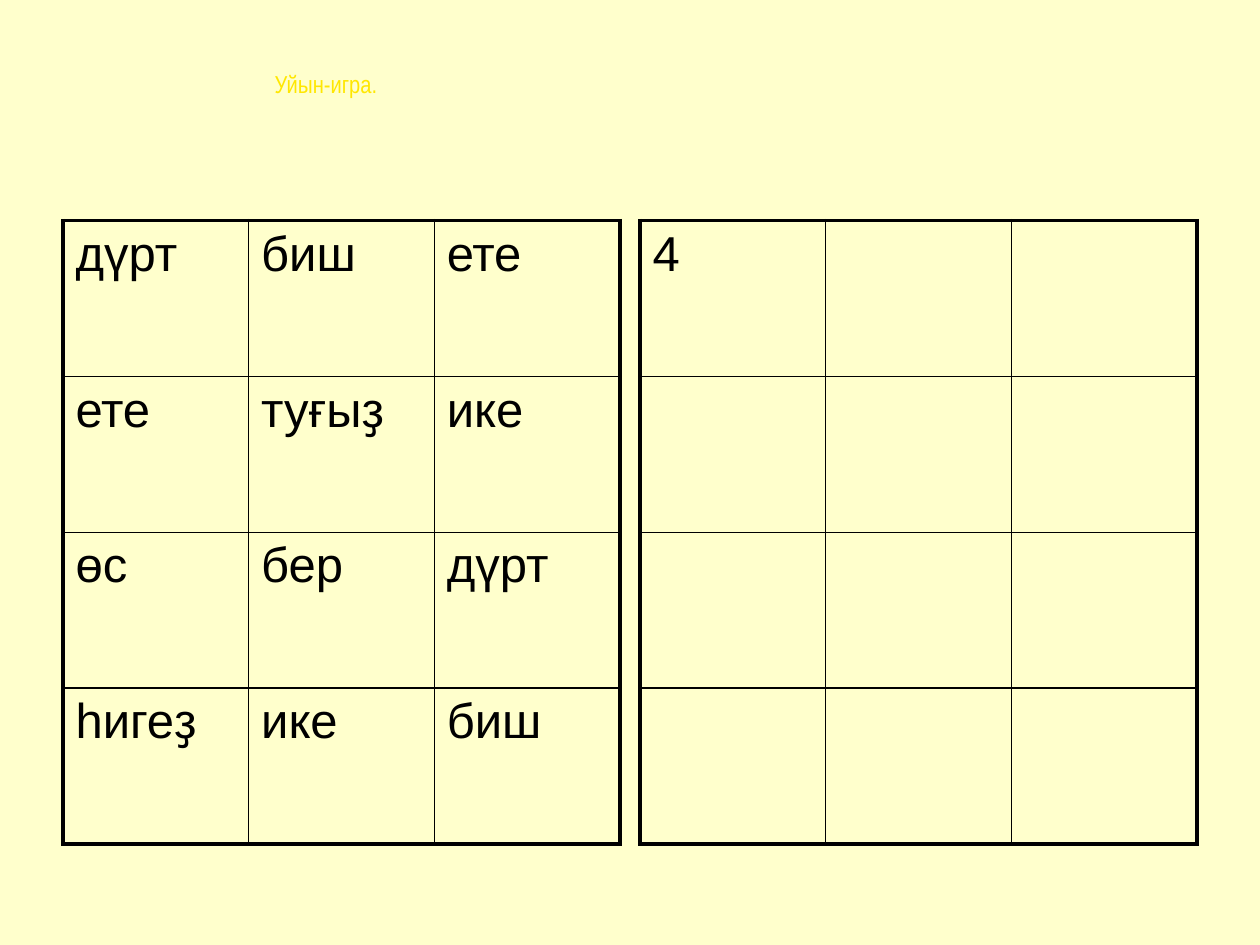
from lxml.etree import SubElement
from pptx import Presentation
from pptx.dml.color import RGBColor
from pptx.enum.text import MSO_ANCHOR, MSO_AUTO_SIZE, PP_ALIGN
from pptx.oxml.ns import qn
from pptx.util import Inches, Pt

COLORS = {"background": "FFFFCC", "title": "FFE701", "ink": "000000"}
ROWS, COLUMNS = 4, 3
THICK, THIN = 2.25, 1
TABLE_TOP, TABLE_WIDTH, TABLE_HEIGHT = 1.75, 4.42, 4.95

WORDS = [
    ["дүрт", "биш", "ете"],
    ["ете", "туғыҙ", "ике"],
    ["өс", "бер", "дүрт"],
    ["һигеҙ", "ике", "биш"],
]
ANSWERS = [["4", "", ""]] + [[""] * COLUMNS for _ in range(ROWS - 1)]


def color(name):
    return RGBColor.from_string(COLORS[name])


def format_text(para, font, size, color_name):
    for span in para.runs:
        span.font.name = font
        span.font.size = Pt(size)
        span.font.color.rgb = color(color_name)


def add_title(page, text):
    title = page.shapes.title
    title.left, title.top = Inches(2.08), Inches(0.5)
    title.width, title.height = Inches(6), Inches(0.87)
    frame = title.text_frame
    frame.text = text
    frame.word_wrap = True
    frame.auto_size = MSO_AUTO_SIZE.NONE
    frame.vertical_anchor = MSO_ANCHOR.TOP
    para = frame.paragraphs[0]
    para.alignment = PP_ALIGN.LEFT
    format_text(para, "Arial Narrow", 14, "title")


def set_borders(cell, row, column):
    """Thick lines on the outside of the grid, thin ones inside."""
    on_edge = {
        "L": column == 0,
        "R": column == COLUMNS - 1,
        "T": row == 0,
        "B": row == ROWS - 1,
    }
    properties = cell._tc.get_or_add_tcPr()
    for side, outer in on_edge.items():
        line = SubElement(properties, qn(f"a:ln{side}"),
                          w=str(Pt(THICK if outer else THIN)))
        fill = SubElement(line, qn("a:solidFill"))
        SubElement(fill, qn("a:srgbClr"), val=COLORS["ink"])


def add_grid(page, left, rows):
    table = page.shapes.add_table(
        ROWS, COLUMNS, Inches(left), Inches(TABLE_TOP),
        Inches(TABLE_WIDTH), Inches(TABLE_HEIGHT)).table
    table.first_row = False
    table.horz_banding = False
    for row, texts in enumerate(rows):
        for column, text in enumerate(texts):
            cell = table.cell(row, column)
            set_borders(cell, row, column)
            cell.fill.background()
            if text:
                para = cell.text_frame.paragraphs[0]
                para.text = text
                format_text(para, "Arial", 28, "ink")


def main():
    deck = Presentation()
    deck.slide_width, deck.slide_height = Inches(10), Inches(7.5)
    page = deck.slides.add_slide(deck.slide_layouts[5])
    page.background.fill.solid()
    page.background.fill.fore_color.rgb = color("background")

    add_title(page, "Уйын-игра.")
    # Number words on the left, their digits on the right
    add_grid(page, 0.5, WORDS)
    add_grid(page, 5.08, ANSWERS)
    deck.save("out.pptx")


if __name__ == "__main__":
    main()
